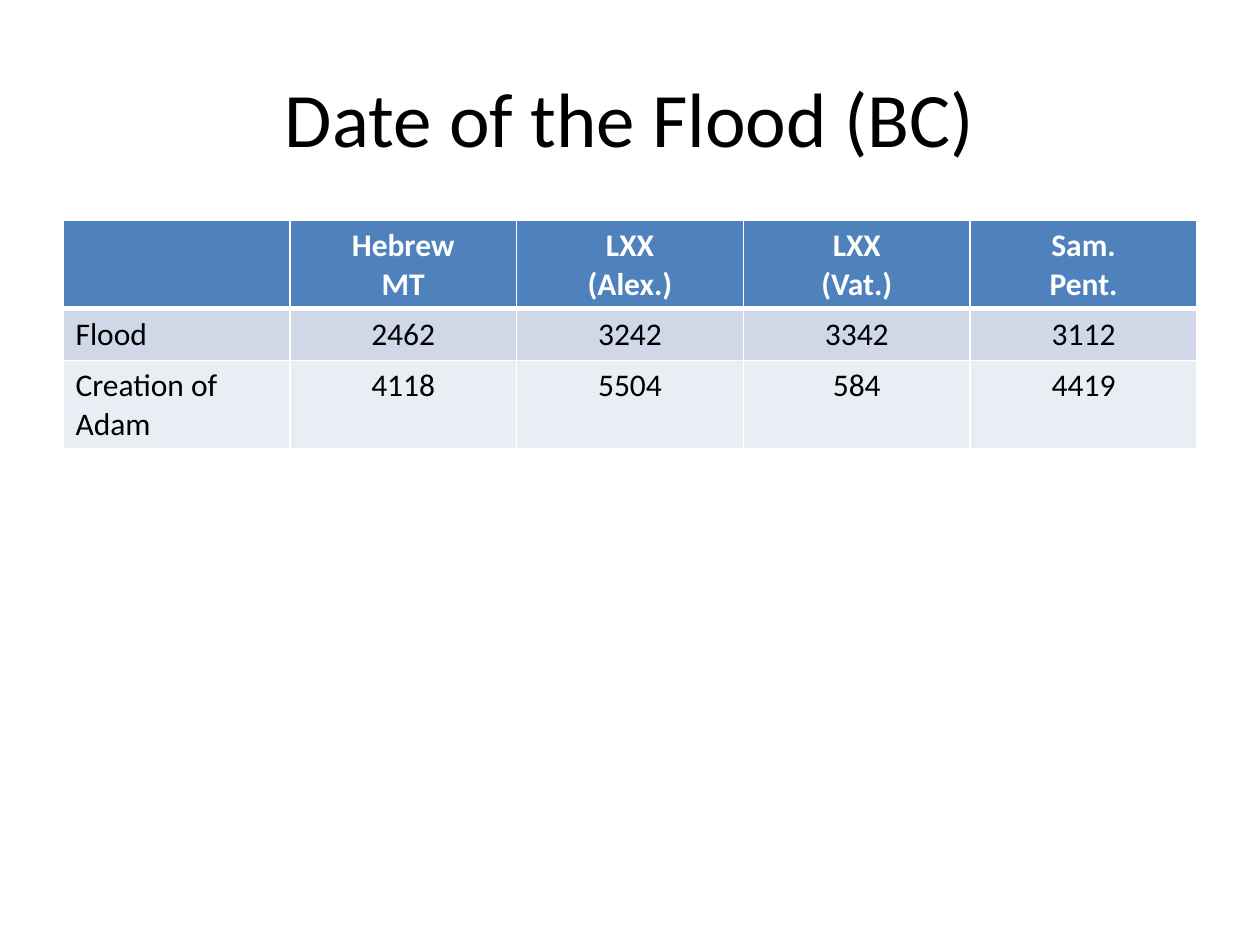
from lxml.etree import SubElement
from pptx import Presentation
from pptx.dml.color import RGBColor
from pptx.enum.text import MSO_ANCHOR as Anchor, PP_ALIGN as Align
from pptx.oxml.ns import qn
from pptx.util import Inches, Pt

HEADINGS = ["", "Hebrew\nMT", "LXX\n(Alex.)", "LXX\n(Vat.)", "Sam.\nPent."]
DATES = [
    ["Flood", "2462", "3242", "3342", "3112"],
    ["Creation of Adam", "4118", "5504", "584", "4419"],
]


def rgb(value):
    return RGBColor.from_string(value)


class DateSlide:
    """Holds the style and the current slide, and adds its elements."""

    font = "Calibri"
    ink = "000000"
    paper = "FFFFFF"
    header = "4F81BD"
    bands = ["D0D8E8", "E9EDF4"]

    def __init__(self, deck):
        self.slide = deck.slides.add_slide(deck.slide_layouts[6])

    def set_text(self, frame, text, size, color, align, bold=False):
        frame.text = text
        for paragraph in frame.paragraphs:
            paragraph.alignment = align
            for run in paragraph.runs:
                font = run.font
                font.name, font.size, font.bold = self.font, Pt(size), bold
                font.color.rgb = rgb(color)

    def title(self, text, left, top, width, height):
        box = self.slide.shapes.add_textbox(
            Inches(left), Inches(top), Inches(width), Inches(height))
        frame = box.text_frame
        frame.word_wrap = True
        frame.vertical_anchor = Anchor.MIDDLE
        self.set_text(frame, text, 44, self.ink, Align.CENTER)

    def border(self, cell, side, points):
        line = SubElement(cell._tc.get_or_add_tcPr(), qn(f"a:ln{side}"), w=str(Pt(points)))
        fill = SubElement(line, qn("a:solidFill"))
        SubElement(fill, qn("a:srgbClr"), val=self.paper)

    def table(self, rows, left, top, width, height, row_height):
        holder = self.slide.shapes.add_table(
            len(rows), len(rows[0]), Inches(left), Inches(top), Inches(width), Inches(height))
        grid = holder.table
        for r, texts in enumerate(rows):
            grid.rows[r].height = Inches(row_height)
            is_header = r == 0
            fill = self.header if is_header else self.bands[(r - 1) % 2]
            color = self.paper if is_header else self.ink
            for c, text in enumerate(texts):
                cell = grid.cell(r, c)
                align = Align.CENTER if is_header or c else Align.LEFT
                self.set_text(cell.text_frame, text, 18, color, align, is_header)
                top_width, bottom_width = (3 if r == 1 else 1), (3 if is_header else 1)
                for side, points in zip("LRTB", (1, 1, top_width, bottom_width)):
                    self.border(cell, side, points)
                cell.fill.solid()
                cell.fill.fore_color.rgb = rgb(fill)
        holder.height = Inches(height)


def main():
    deck = Presentation()
    deck.slide_width, deck.slide_height = Inches(10), Inches(7.5)
    flood = DateSlide(deck)
    flood.title("Date of the Flood (BC)", 0.5, 0.3, 9, 1.25)
    flood.table([HEADINGS] + DATES, 0.5, 1.75, 9, 1.81, 0.41)
    deck.save("out.pptx")


if __name__ == "__main__":
    main()
